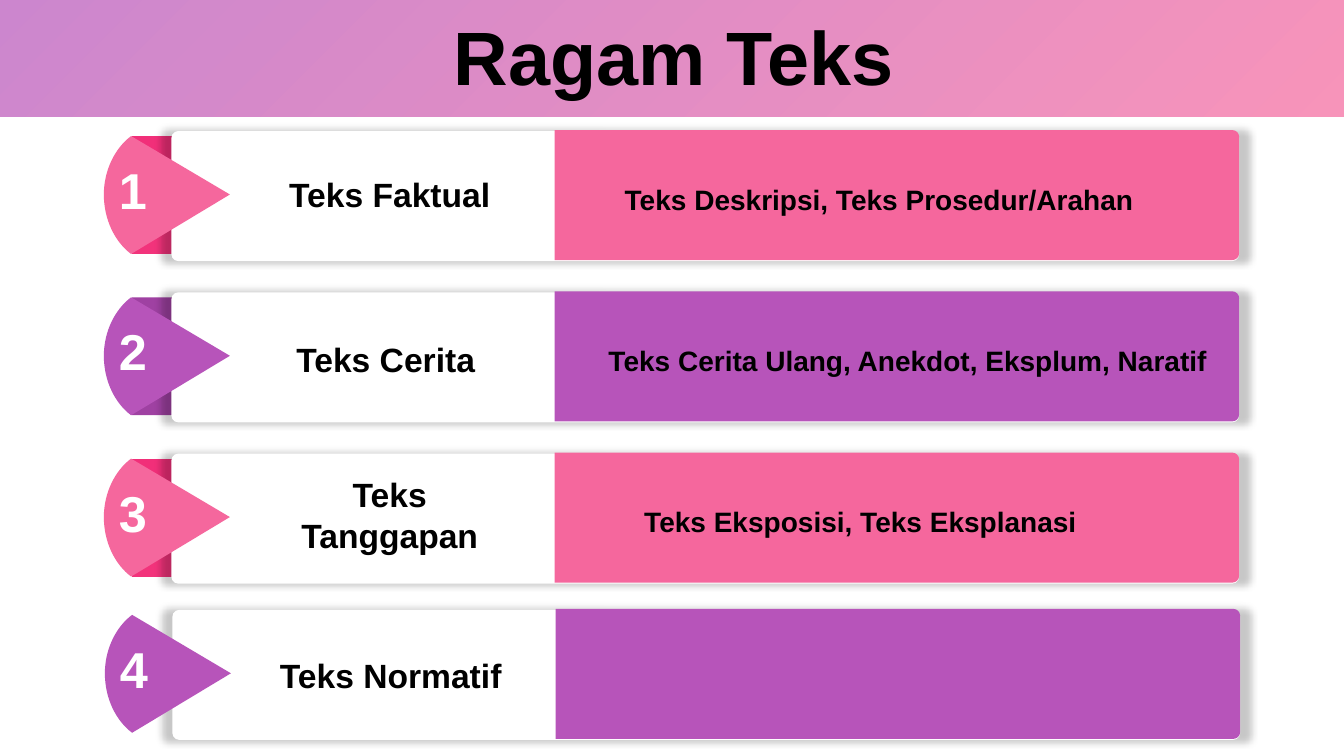
from dataclasses import dataclass

import lxml.etree
import pptx
import pptx.dml.color
import pptx.enum.shapes
import pptx.enum.text
import pptx.oxml.ns
import pptx.util

RGBColor = pptx.dml.color.RGBColor
Shapes = pptx.enum.shapes.MSO_SHAPE
Align = pptx.enum.text.PP_ALIGN
Anchor = pptx.enum.text.MSO_ANCHOR
qn = pptx.oxml.ns.qn

PX = 9144
FONT = "Arial"
BLACK = RGBColor(0x00, 0x00, 0x00)
WHITE = RGBColor(0xFF, 0xFF, 0xFF)
PINK = RGBColor(0xF5, 0x67, 0x9D)
PURPLE = RGBColor(0xB7, 0x54, 0xBA)
DARK_PINK = RGBColor(0xF1, 0x2F, 0x79)
DARK_PINK_END = RGBColor(0xF2, 0x33, 0x7B)
DARK_PURPLE = RGBColor(0x9F, 0x41, 0xA2)

Point = tuple[int, int]


@dataclass(frozen=True)
class Box:
    left: int
    top: int
    width: int
    height: int

    def emu(self) -> tuple[int, int, int, int]:
        return self.left * PX, self.top * PX, self.width * PX, self.height * PX


@dataclass(frozen=True)
class TextStyle:
    size: int
    color: RGBColor = BLACK
    align: Align = Align.CENTER
    anchor: Anchor = Anchor.TOP


@dataclass(frozen=True)
class Outline:
    points: tuple[Point, ...]
    curve_starts: tuple[int, ...]


@dataclass(frozen=True)
class Row:
    number: str
    label: str
    label_box: Box
    detail: str
    detail_width: int
    top: int
    color: RGBColor
    fold: tuple[RGBColor, ...]
    shift: int = 0


TITLE = TextStyle(54, anchor=Anchor.MIDDLE)
LABEL = TextStyle(24, anchor=Anchor.MIDDLE)
DETAIL = TextStyle(20)
NUMBER = TextStyle(36, WHITE, Align.LEFT)

WEDGE = Outline(
    ((58, 0), (117, 98), (105, 114), (83, 125), (58, 125), (34, 125), (12, 114), (0, 98)),
    (2, 5))
PANEL = Outline(
    ((0, 0), (672, 0), (676, 0), (679, 3), (679, 7),
     (679, 122), (679, 126), (676, 129), (672, 129), (0, 129)),
    (2, 6))

PINK_FOLD = (DARK_PINK, DARK_PINK_END)
ROWS = [
    Row("1", "Teks Faktual", Box(247, 168, 279, 50),
        "Teks Deskripsi, Teks Prosedur/Arahan", 590, 129, PINK, PINK_FOLD),
    Row("2", "Teks Cerita", Box(243, 331, 279, 50),
        "Teks Cerita Ulang, Anekdot, Eksplum, Naratif", 647, 289, PURPLE, (DARK_PURPLE,)),
    Row("3", "Teks Tanggapan", Box(247, 465, 279, 91),
        "Teks Eksposisi, Teks Eksplanasi", 553, 449, PINK, PINK_FOLD),
    Row("4", "Teks Normatif", Box(248, 645, 279, 50), "", 0, 604, PURPLE, (), 1),
]


def add_block(slide, kind: Shapes, box: Box, colors: tuple[RGBColor, ...], angle: int = 0):
    shape = slide.shapes.add_shape(kind, *box.emu())
    shape.shadow.inherit = False
    shape.line.fill.background()
    if len(colors) == 1:
        shape.fill.solid()
        shape.fill.fore_color.rgb = colors[0]
    else:
        shape.fill.gradient()
        shape.fill.gradient_angle = angle
        for position, (stop, color) in enumerate(zip(shape.fill.gradient_stops, colors)):
            stop.position = position
            stop.color.rgb = color
    return shape


def add_alpha(element, percent: int) -> None:
    for color in element.iter(qn("a:srgbClr")):
        lxml.etree.SubElement(color, qn("a:alpha"), val=str(percent * 1000))


def add_card(slide, box: Box) -> None:
    card = add_block(slide, Shapes.ROUNDED_RECTANGLE, box, (WHITE,))
    card.adjustments[0] = 0.053
    effects = card._element.spPr.find(qn("a:effectLst"))
    shadow = lxml.etree.SubElement(
        effects, qn("a:outerShdw"), blurRad=str(pptx.util.Pt(5)), dist="0", dir="0",
        sx="102000", sy="102000", algn="ctr", rotWithShape="0")
    lxml.etree.SubElement(shadow, qn("a:srgbClr"), val=str(BLACK))
    add_alpha(shadow, 22)


def add_outline(slide, outline: Outline, left: int, top: int, color: RGBColor):
    points = [(left + x, top + y) for x, y in outline.points]
    builder = slide.shapes.build_freeform(*points[0], scale=PX)
    builder.add_line_segments(points[1:], close=True)
    shape = builder.convert_to_shape()
    segments = list(shape._element.iter(qn("a:lnTo")))
    for start in outline.curve_starts:
        curve = segments[0].makeelement(qn("a:cubicBezTo"))
        segments[start - 1].addprevious(curve)
        for segment in segments[start - 1:start + 2]:
            curve.append(segment[0])
            segment.getparent().remove(segment)
    shape.shadow.inherit = False
    shape.fill.solid()
    shape.fill.fore_color.rgb = color
    shape.line.fill.background()
    return shape


def add_text(slide, box: Box, text: str, style: TextStyle):
    shape = slide.shapes.add_textbox(*box.emu())
    frame = shape.text_frame
    frame.word_wrap = True
    frame.vertical_anchor = style.anchor
    frame.margin_left = frame.margin_right = 12 * PX
    frame.margin_top = frame.margin_bottom = 5 * PX
    paragraph = frame.paragraphs[0]
    paragraph.alignment = style.align
    run = paragraph.add_run()
    run.text = text
    run.font.name = FONT
    run.font.size = pptx.util.Pt(style.size)
    run.font.bold = True
    run.font.color.rgb = style.color
    return shape


def add_row(slide, row: Row) -> None:
    if row.fold:
        add_block(slide, Shapes.RECTANGLE, Box(131, row.top + 6, 241, 117), row.fold, 270)
    add_card(slide, Box(170 + row.shift, row.top + 1, 1059, 129))
    wedge = add_outline(slide, WEDGE, 107 + row.shift, row.top + 2, row.color)
    wedge.rotation = 90
    add_outline(slide, PANEL, 550 + row.shift, row.top, row.color)
    texts = [
        (row.label_box, row.label, LABEL),
        (Box(577, row.top + 47, row.detail_width, 44), row.detail, DETAIL),
        (Box(106 + row.shift, row.top + 24, 125, 71), row.number, NUMBER),
    ]
    for box, text, style in texts:
        if text:
            shape = add_text(slide, box, text, style)
            shape.text_frame.auto_size = pptx.enum.text.MSO_AUTO_SIZE.SHAPE_TO_FIT_TEXT


def main() -> None:
    presentation = pptx.Presentation()
    presentation.slide_width = 1333 * PX
    presentation.slide_height = 750 * PX
    slide = presentation.slides.add_slide(presentation.slide_layouts[6])
    banner = add_block(slide, Shapes.RECTANGLE, Box(0, 0, 1333, 116), (PINK, PURPLE), 135)
    add_alpha(banner._element.spPr, 70)
    title = add_text(slide, Box(35, 21, 1266, 79), "Ragam Teks", TITLE)
    paragraph = title.text_frame.paragraphs[0]
    paragraph.line_spacing = 0.9
    paragraph.space_before = pptx.util.Pt(10)
    for row in ROWS:
        add_row(slide, row)
    presentation.save("out.pptx")


if __name__ == "__main__":
    main()
